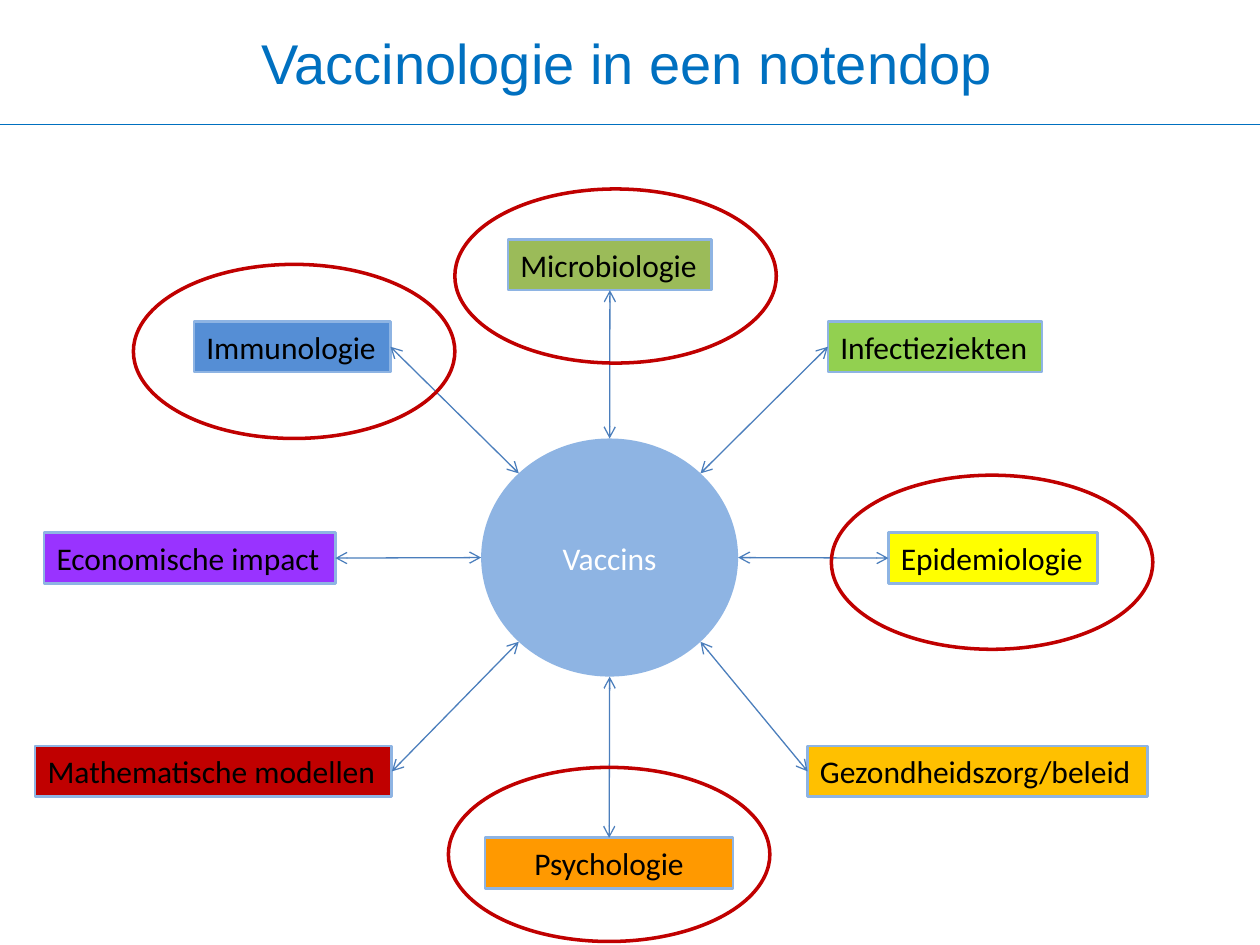
"""Build a slide that links eight fields of study to a central vaccine hub."""
from math import hypot

from lxml import etree
from pptx import Presentation
from pptx import util as u
from pptx.dml.color import RGBColor
from pptx.enum import shapes, text
from pptx.oxml.ns import qn

TITLE = "Vaccinologie in een notendop"
HUB = ("Vaccins", 9.7, 8.84, 5.18, 4.8)
HIGH = 1.02
# name, left, top, width, fill, direction from hub
FIELDS = [
    ("Immunologie", 3.91, 6.48, 3.96, "558ED5", (-1, -1)),
    ("Microbiologie", 10.24, 4.83, 4.11, "9BBB59", (0, -1)),
    ("Infectieziekten", 16.69, 6.48, 4.32, "92D050", (1, -1)),
    ("Epidemiologie", 17.91, 10.74, 4.22, "FFFF00", (1, 0)),
    ("Gezondheidszorg/beleid", 16.28, 15.04, 6.86, "FFC000", (1, 1)),
    ("Mathematische modellen", 0.71, 15.04, 7.19, "C00000", (-1, 1)),
    ("Economische impact", 0.89, 10.74, 5.87, "9933FF", (-1, 0)),
    ("Psychologie", 9.78, 16.89, 5.0, "FF9900", (0, 1)),
]
RINGS = [(2.69, 5.33), (9.17, 3.81), (16.76, 9.58), (9.04, 15.47)]
RING = (6.48, 3.51)
BLUE, PALE, LINK, RED = "0070C0", "8EB4E3", "4B7EBC", "C00000"
KIND = shapes.MSO_SHAPE
ALIGN = text.PP_ALIGN
ANCHOR = text.MSO_ANCHOR


def paint(form, code):
    form.solid()
    form.fore_color.rgb = RGBColor.from_string(code)


def write(shape, words, size, face, code, align, anchor):
    frame = shape.text_frame
    frame.text = words
    frame.vertical_anchor = anchor
    para = frame.paragraphs[0]
    para.alignment = align
    para.font.size = u.Pt(size)
    para.font.name = face
    paint(para.font.fill, code)
    return frame


def draw(slide, kind, area, fill=None, line=None, width=1.5):
    shape = slide.shapes.add_shape(kind, *map(u.Cm, area))
    shape.shadow.inherit = False
    if fill:
        paint(shape.fill, fill)
    else:
        shape.fill.background()
    if line:
        paint(shape.line.fill, line)
        shape.line.width = u.Pt(width)
    else:
        shape.line.fill.background()
    return shape


def join(slide, start, end, code, heads=()):
    link = slide.shapes.add_connector(
        shapes.MSO_CONNECTOR.STRAIGHT, *map(u.Cm, (*start, *end)))
    paint(link.line.fill, code)
    link.line.width = u.Pt(0.75)
    for head in heads:
        etree.SubElement(link.line._get_or_add_ln(), qn(head), type="arrow")
    etree.SubElement(link._element.spPr, qn("a:effectLst"))


def edges(left, top, wide, way):
    """Return the facing points on the field box and on the hub."""
    _, x, y, w, h = HUB
    dx, dy = way
    box = (left + wide * (1 - dx) / 2,
           top + HIGH * (1 if dx else 2 - (1 + dy)) / (2 if dx else 2))
    size = hypot(dx, dy)
    hub = (x + w / 2 * (1 + dx / size), y + h / 2 * (1 + dy / size))
    return box, hub


def main():
    deck = Presentation()
    deck.slide_width, deck.slide_height = u.Cm(25.4), u.Cm(19.05)
    slide = deck.slides.add_slide(deck.slide_layouts[5])

    title = slide.shapes.title
    title.left, title.top, title.width, title.height = map(
        u.Cm, (0.51, 0.43, 24.26, 1.63))
    write(title, TITLE, 32, "Arial", BLUE, ALIGN.CENTER, ANCHOR.MIDDLE)

    name, *area = HUB
    hub = draw(slide, KIND.OVAL, area, PALE)
    write(hub, name, 18, "Calibri", "FFFFFF", ALIGN.CENTER, ANCHOR.MIDDLE)

    for name, left, top, wide, fill, way in FIELDS:
        box = draw(slide, KIND.RECTANGLE, (left, top, wide, HIGH), fill, PALE)
        last = name == FIELDS[-1][0]
        align = ALIGN.CENTER if last else ALIGN.LEFT
        frame = write(box, name, 18, "Calibri", "000000", align, ANCHOR.TOP)
        frame.word_wrap = last

    for _, left, top, wide, _, way in FIELDS:
        join(slide, *edges(left, top, wide, way), LINK,
             ("a:headEnd", "a:tailEnd"))

    join(slide, (0, 2.51), (25.4, 2.51), BLUE)
    for spot in RINGS:
        draw(slide, KIND.OVAL, (*spot, *RING), line=RED, width=2)

    deck.save("out.pptx")


if __name__ == "__main__":
    main()
